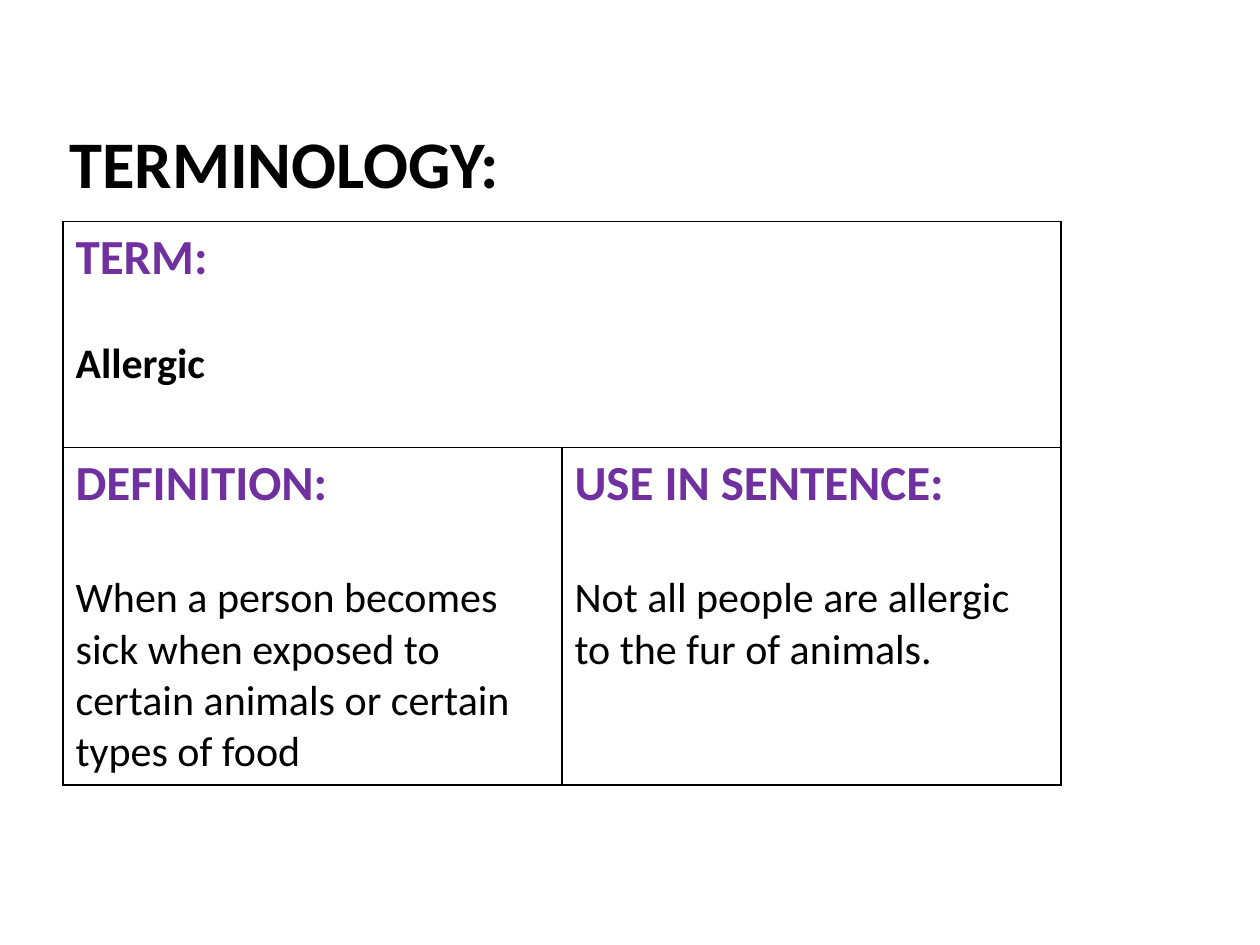
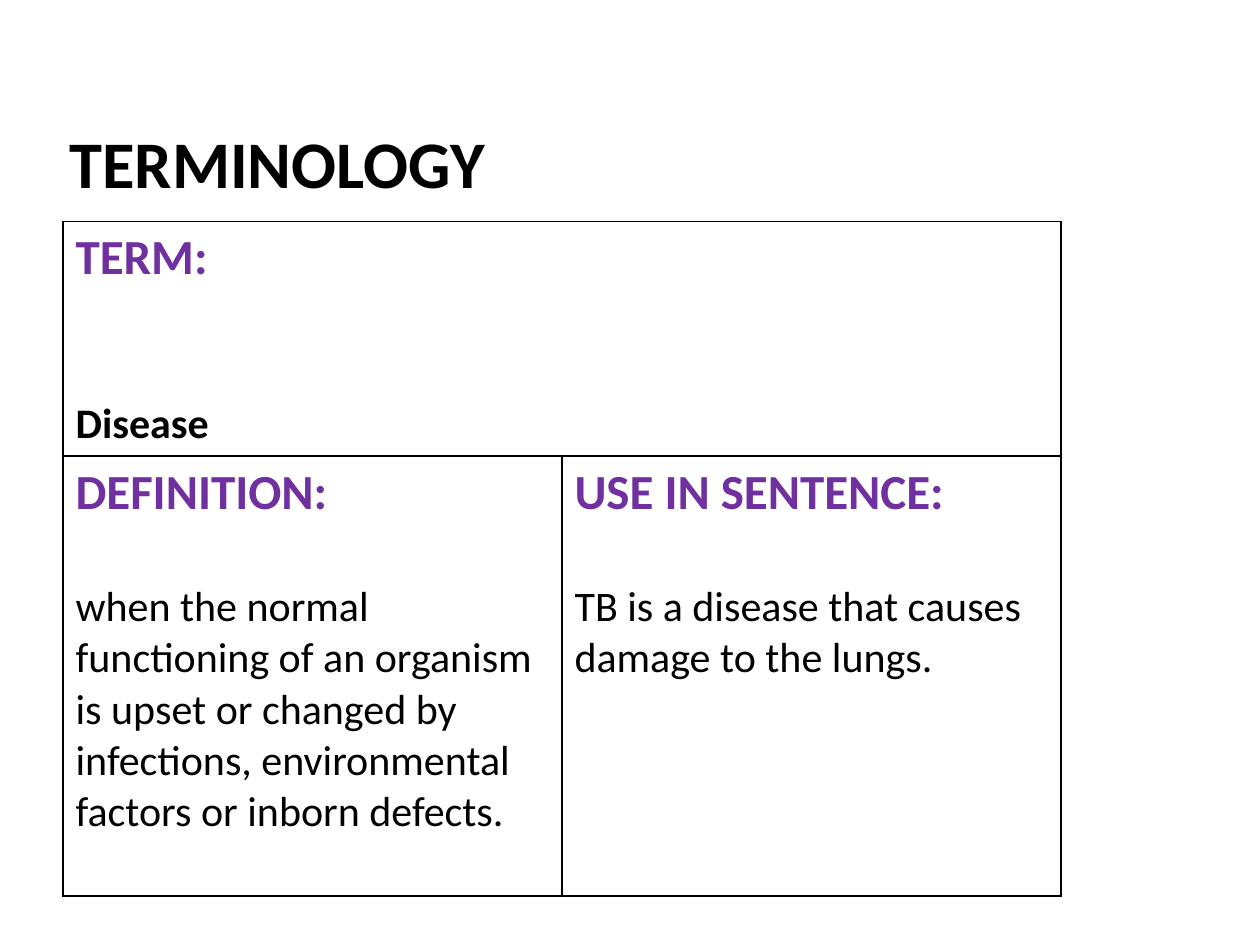
from dataclasses import dataclass

from lxml import etree
from pptx import Presentation
from pptx.dml.color import RGBColor
from pptx.enum.text import MSO_ANCHOR, MSO_AUTO_SIZE, PP_ALIGN
from pptx.oxml.ns import qn
from pptx.util import Inches, Pt

LEFT = PP_ALIGN.LEFT
BOTTOM = MSO_ANCHOR.BOTTOM
NO_AUTOFIT = MSO_AUTO_SIZE.NONE
TITLE_ONLY = 5
BORDER_TAGS = ("a:lnL", "a:lnR", "a:lnT", "a:lnB")


@dataclass(frozen=True)
class Theme:
    """Colours, type sizes and shared positions."""
    font: str = "Calibri"
    ink: str = "000000"
    heading: str = "7030A0"
    paper: str = "FFFFFF"
    title_size: int = 38
    heading_size: int = 28
    body_size: int = 24
    border_width: int = 1
    definition_gap: int = 34
    left: float = 0.5
    width: float = 7.92
    title_top: float = 0.35
    title_height: float = 1.25
    table_top: float = 1.76


@dataclass(frozen=True)
class TermCard:
    """One term with its explanation and the measures of its table."""
    title: str
    term: str
    definition: str
    sentence: str
    term_gap: int
    row_heights: tuple


THEME = Theme()

CARDS = (
    TermCard(
        "TERMINOLOGY:",
        "Allergic",
        "When a person becomes sick when exposed to certain animals "
        "or certain types of food",
        "Not all people are allergic to the fur of animals.",
        term_gap=29,
        row_heights=(1.79, 2.68),
    ),
    TermCard(
        "TERMINOLOGY",
        "Disease",
        "when the normal functioning of an organism is upset or changed by "
        "infections, environmental factors or inborn defects.",
        "TB is a disease that causes damage to the lungs.",
        term_gap=63,
        row_heights=(1.86, 3.49),
    ),
)


def style_paragraph(paragraph, size, color, bold):
    """Apply the theme font to a left-aligned paragraph."""
    paragraph.alignment = LEFT
    font = paragraph.font
    font.name = THEME.font
    font.size = Pt(size)
    font.bold = bold
    font.color.rgb = RGBColor.from_string(color)


def add_title(slide, text):
    """Fill and place the title placeholder."""
    title = slide.shapes.title
    title.left, title.top = Inches(THEME.left), Inches(THEME.title_top)
    title.width, title.height = Inches(THEME.width), Inches(THEME.title_height)
    frame = title.text_frame
    frame.text = text
    frame.auto_size = NO_AUTOFIT
    frame.vertical_anchor = BOTTOM
    frame.margin_left = frame.margin_right = Inches(0.05)
    frame.margin_top = frame.margin_bottom = 0
    style_paragraph(frame.paragraphs[0], THEME.title_size, THEME.ink, True)


def frame_cell(cell):
    """Give a cell a plain fill and a border on each side."""
    cell.fill.solid()
    cell.fill.fore_color.rgb = RGBColor.from_string(THEME.paper)
    properties = cell._tc.get_or_add_tcPr()
    for position, tag in enumerate(BORDER_TAGS):
        border = etree.Element(qn(tag), w=str(Pt(THEME.border_width)))
        fill = etree.SubElement(border, qn("a:solidFill"))
        etree.SubElement(fill, qn("a:srgbClr"), val=THEME.ink)
        properties.insert(position, border)


def write_entry(cell, heading, body, gap, bold=False):
    """Write a purple heading with its entry below."""
    frame = cell.text_frame
    frame.text = heading
    style_paragraph(frame.paragraphs[0], THEME.heading_size, THEME.heading, True)
    entry = frame.add_paragraph()
    entry.text = body
    entry.space_before = Pt(gap)
    style_paragraph(entry, THEME.body_size, THEME.ink, bold)


def add_term_table(slide, card):
    """Add the table with the term above its definition and sentence."""
    table = slide.shapes.add_table(
        2, 2, Inches(THEME.left), Inches(THEME.table_top),
        Inches(THEME.width), Inches(sum(card.row_heights))).table
    table.first_row = table.horz_banding = False
    for row, height in zip(table.rows, card.row_heights):
        row.height = Inches(height)
    for cell in table.iter_cells():
        frame_cell(cell)
    term_cell = table.cell(0, 0)
    term_cell.merge(table.cell(0, 1))
    write_entry(term_cell, "TERM:", card.term, card.term_gap, bold=True)
    write_entry(table.cell(1, 0), "DEFINITION:", card.definition,
                THEME.definition_gap)
    write_entry(table.cell(1, 1), "USE IN SENTENCE:", card.sentence,
                THEME.definition_gap)


def main():
    """Build one slide for each term."""
    deck = Presentation()
    deck.slide_width, deck.slide_height = Inches(10), Inches(7.5)
    for card in CARDS:
        slide = deck.slides.add_slide(deck.slide_layouts[TITLE_ONLY])
        add_title(slide, card.title)
        add_term_table(slide, card)
    deck.save("out.pptx")


if __name__ == "__main__":
    main()
